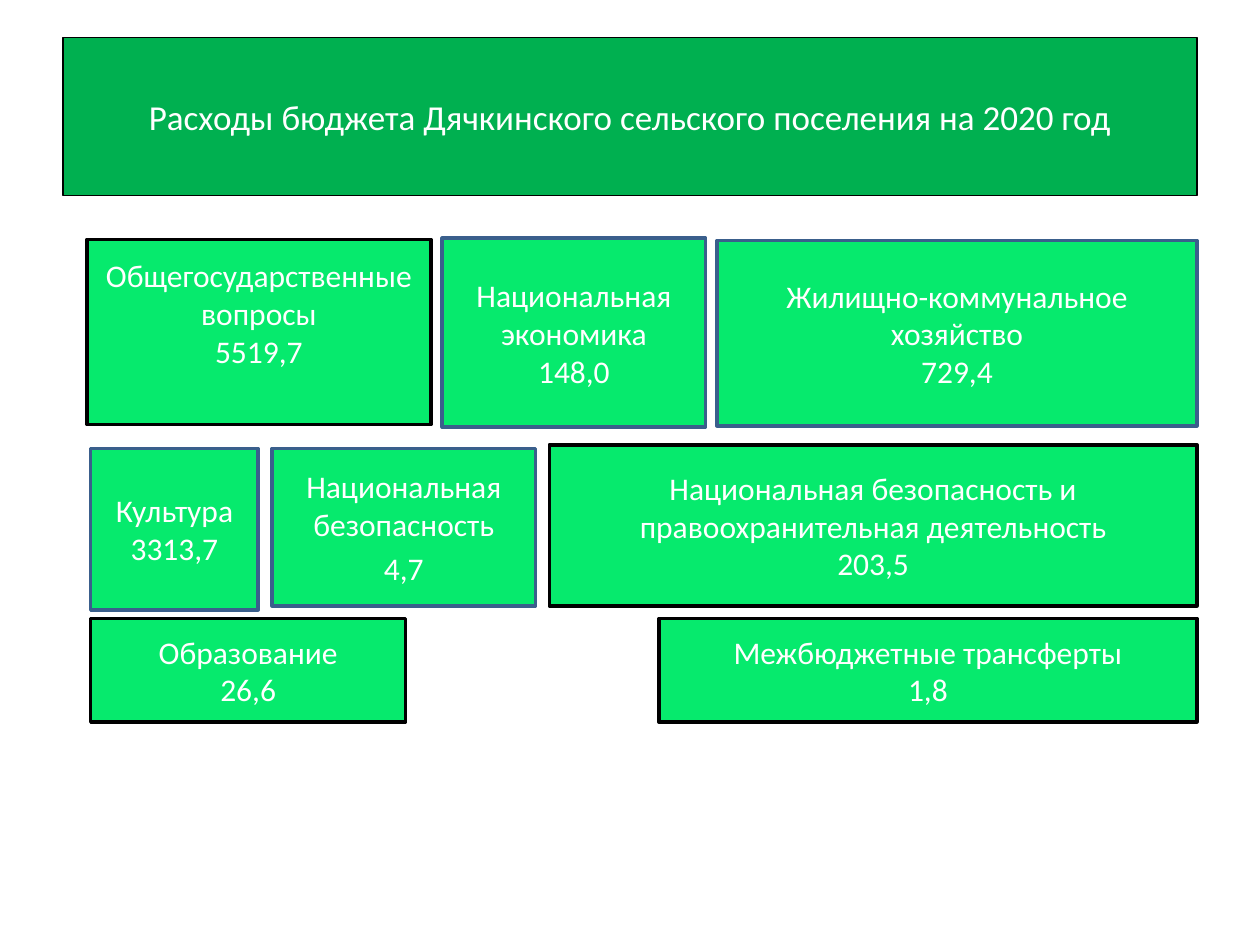
from dataclasses import dataclass

from pptx import Presentation
from pptx.dml.color import RGBColor
from pptx.enum.shapes import MSO_SHAPE
from pptx.enum.text import MSO_ANCHOR, PP_ALIGN
from pptx.slide import Slide
from pptx.util import Inches, Pt

COLORS = {
    "title": "00B050",
    "box": "06EA6D",
    "black": "000000",
    "blue": "3A5F8C",
    "text": "FFFFFF",
}
FONT = "Calibri"


@dataclass(frozen=True)
class Box:
    lines: tuple[str, ...]
    left: float
    top: float
    width: float
    height: float
    outline: str = "black"
    fill: str = "box"
    outline_width: float = 2
    font_size: float = 18
    space_before: float = 0
    bottom_inset: float = 0.05


TITLE = Box(("Расходы бюджета Дячкинского сельского поселения на 2020 год",),
            0.5, 0.3, 9, 1.25, fill="title", outline_width=0.75, font_size=20)

EXPENSES = (
    Box(("Общегосударственные вопросы", "5519,7"), 0.69, 1.9, 2.73, 1.47,
        bottom_inset=0.35),
    Box(("Национальная экономика", "148,0"), 3.51, 1.89, 2.09, 1.5, "blue"),
    Box(("Жилищно-коммунальное хозяйство", "729,4"), 5.69, 1.91, 3.81, 1.47, "blue"),
    Box(("Культура", "3313,7"), 0.72, 3.56, 1.33, 1.28, "blue"),
    Box(("Национальная безопасность", "4,7"), 2.16, 3.56, 2.09, 1.25, "blue",
        space_before=3.6),
    Box(("Национальная безопасность и правоохранительная деятельность", "203,5"),
        4.36, 3.53, 5.14, 1.28),
    Box(("Образование", "26,6"), 0.72, 4.91, 2.5, 0.82),
    Box(("Межбюджетные трансферты", "1,8"), 5.23, 4.91, 4.27, 0.82),
)


def color(name: str) -> RGBColor:
    return RGBColor.from_string(COLORS[name])


def draw_box(slide: Slide, box: Box) -> None:
    shape = slide.shapes.add_shape(
        MSO_SHAPE.RECTANGLE, Inches(box.left), Inches(box.top),
        Inches(box.width), Inches(box.height))
    shape.shadow.inherit = False
    shape.fill.solid()
    shape.fill.fore_color.rgb = color(box.fill)
    shape.line.color.rgb = color(box.outline)
    shape.line.width = Pt(box.outline_width)

    frame = shape.text_frame
    frame_format = {
        "word_wrap": True,
        "vertical_anchor": MSO_ANCHOR.MIDDLE,
        "margin_bottom": Inches(box.bottom_inset),
    }
    for name, value in frame_format.items():
        setattr(frame, name, value)

    for index, line in enumerate(box.lines):
        paragraph = frame.add_paragraph() if index else frame.paragraphs[0]
        paragraph.alignment = PP_ALIGN.CENTER
        paragraph.space_before = Pt(box.space_before)
        run = paragraph.add_run()
        run.text = line
        for name, value in {"name": FONT, "size": Pt(box.font_size)}.items():
            setattr(run.font, name, value)
        run.font.color.rgb = color("text")


def main() -> None:
    presentation = Presentation()
    presentation.slide_width = Inches(10)
    presentation.slide_height = Inches(7.5)
    slide = presentation.slides.add_slide(presentation.slide_layouts[6])
    for box in (TITLE, *EXPENSES):
        draw_box(slide, box)
    presentation.save("out.pptx")


if __name__ == "__main__":
    main()
